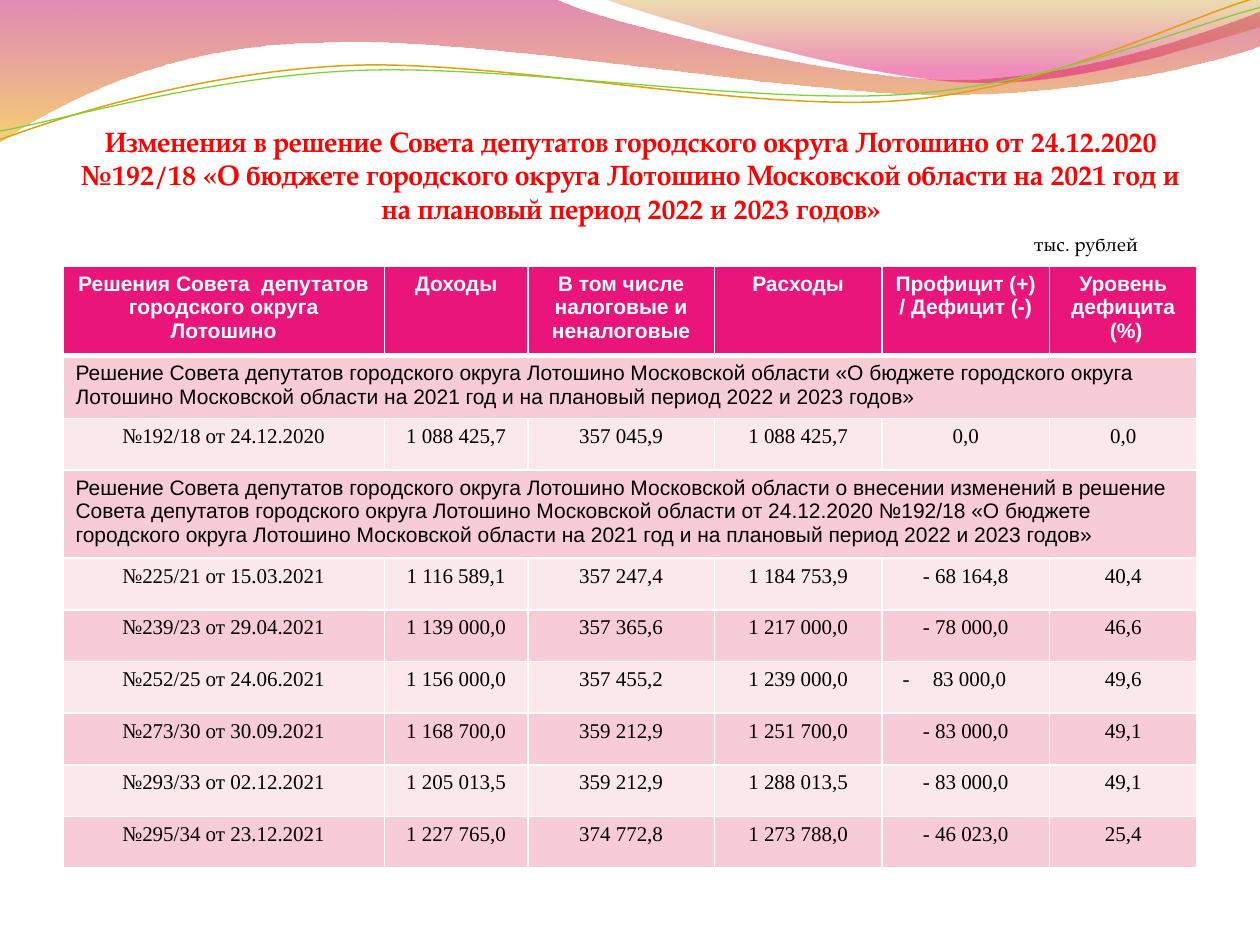
from dataclasses import dataclass

from lxml import etree
from pptx import Presentation
from pptx import util as u
from pptx.dml.color import RGBColor
from pptx.enum import text
from pptx.oxml import ns


@dataclass(frozen=True)
class Theme:
    title: str = "FF0000"
    ink: str = "000000"
    white: str = "FFFFFF"
    header: str = "EA157A"
    bands: tuple = ("FBE8EC", "F7CCD7")
    gold: str = "E0A209"
    green: str = "7FD13B"
    display: str = "TeX Gyre Pagella"
    sans: str = "Arial"
    serif: str = "Times New Roman"
    title_size: int = 16
    unit_size: int = 11
    cell_size: int = 12


THEME = Theme()
W, H = u.Inches(10), u.Inches(7.5)
COLUMNS = (2.55, 1.14, 1.48, 1.33, 1.33, 1.17)
ROW_H, HEADER_H = 0.41, 0.71
SPANNING = (1, 3)  # rows merged across all columns

TITLE = ("Изменения в решение Совета депутатов городского округа Лотошино от 24.12.2020 "
         "№192/18 «О бюджете городского округа Лотошино Московской области на 2021 год "
         "и на плановый период 2022 и 2023 годов»")
BUDGET = ("«О бюджете городского округа Лотошино Московской области на 2021 год "
          "и на плановый период 2022 и 2023 годов»")
COUNCIL = "Решение Совета депутатов городского округа Лотошино Московской области "
ROWS = [
    ("Решения Совета  депутатов городского округа Лотошино", "Доходы",
     "В том числе налоговые и неналоговые", "Расходы",
     "Профицит (+) / Дефицит (-)", "Уровень дефицита\n (%)"),
    (COUNCIL + BUDGET,),
    ("№192/18 от 24.12.2020", "1 088 425,7", "357 045,9", "1 088 425,7", "0,0", "0,0"),
    (COUNCIL + "о внесении изменений в решение Совета депутатов городского округа "
     "Лотошино Московской области от 24.12.2020 №192/18 " + BUDGET,),
    ("№225/21 от 15.03.2021", "1 116 589,1", "357 247,4", "1 184 753,9", "- 68 164,8", "40,4"),
    ("№239/23 от 29.04.2021", "1 139 000,0", "357 365,6", "1 217 000,0", "- 78 000,0", "46,6"),
    ("№252/25 от 24.06.2021", "1 156 000,0", "357 455,2", "1 239 000,0", "83 000,0", "49,6"),
    ("№273/30 от 30.09.2021", "1 168 700,0", "359 212,9", "1 251 700,0", "- 83 000,0", "49,1"),
    ("№293/33 от 02.12.2021", "1 205 013,5", "359 212,9", "1 288 013,5", "- 83 000,0", "49,1"),
    ("№295/34 от 23.12.2021", "1 227 765,0", "374 772,8", "1 273 788,0", "- 46 023,0", "25,4"),
]
DASH_CELL = (6, 4)  # its minus sign is a list dash

# Outlines in inches: a start point, then lines (2 numbers) or curves (6 numbers)
BAND = [(0, -0.01), (4.4, -0.01), (4.76, 0.17, 6.64, 0.63, 7.58, 0.63),
        (8.53, 0.63, 9.58, 0.26, 10, 0.09), (10.01, 0.36),
        (9.83, 0.44, 8.7, 0.76, 7.46, 0.75), (6.22, 0.75, 3.82, 0.28, 2.57, 0.34),
        (1.29, 0.35, 0.46, 0.83, -0.01, 1.13)]
CORNER = [(4.79, -0.01), (5.09, 0.11, 6.82, 0.62, 7.69, 0.65),
          (8.56, 0.69, 9.61, 0.32, 10, 0.21), (10, 0)]
GOLD_WAVE = [(0, 1.11), (0.48, 0.93, 1.58, 0.57, 2.77, 0.52),
             (3.95, 0.47, 5.93, 0.89, 7.13, 0.8), (8.33, 0.71, 9.38, 0.15, 9.98, -0.02)]
GREEN_WAVE = [(0, 1.04), (0.47, 0.96, 1.64, 0.61, 2.83, 0.56),
              (4.03, 0.51, 5.97, 0.83, 7.17, 0.75), (8.36, 0.67, 9.41, 0.21, 10, 0.06)]


def rgb(value):
    return RGBColor.from_string(value)


def sub(parent, tag, **attrs):
    return etree.SubElement(parent, ns.qn(tag), attrs)


def add_outline(slide, outline, close):
    """Freeform through all knots; each curve's three lines become one Bezier."""
    points = [(u.Inches(x), u.Inches(y)) for seg in outline
              for x, y in zip(seg[::2], seg[1::2])]
    builder = slide.shapes.build_freeform(*points[0], scale=1.0)
    builder.add_line_segments(points[1:], close=close)
    sp = builder.convert_to_shape()
    sp.shadow.inherit = False
    lines = iter(list(sp._element.iter(ns.qn("a:lnTo"))))
    for seg in outline[1:]:
        knots = [next(lines) for _ in range(len(seg) // 2)]
        if len(knots) == 3:
            curve = etree.Element(ns.qn("a:cubicBezTo"))
            knots[0].addprevious(curve)
            for knot in knots:
                curve.append(knot[0])
                knot.getparent().remove(knot)
    return sp


def add_wash(slide, outline, stops):
    """Filled wave; stops are (position %, colour, opacity %), top to bottom."""
    sp = add_outline(slide, outline, True)
    sp.line.fill.background()
    sp.fill.gradient()
    grad = sp._element.spPr.find(ns.qn("a:gradFill"))
    for child in list(grad):
        grad.remove(child)
    stop_list = sub(grad, "a:gsLst")
    for pos, color, opacity in stops:
        stop = sub(stop_list, "a:gs", pos=str(pos * 1000))
        sub(sub(stop, "a:srgbClr", val=color), "a:alpha", val=str(opacity * 1000))
    sub(grad, "a:lin", ang="5400000", scaled="0")


def add_wave(slide, outline, color, width):
    sp = add_outline(slide, outline, False)
    sp.fill.background()
    sp.line.color.rgb = rgb(color)
    sp.line.width = u.Pt(width)


def style(p, font, size, color, bold=False, align=text.PP_ALIGN.CENTER):
    p.alignment = align
    for r in p.runs:
        r.font.name, r.font.size, r.font.bold = font, u.Pt(size), bold
        r.font.color.rgb = rgb(color)


def add_label(slide, box, content, size, color, anchor, bold=False, insets=None):
    """Text box; box holds left, top, width, height as shares of the slide."""
    x, y, w, h = box
    sp = slide.shapes.add_textbox(int(x * W), int(y * H), int(w * W), int(h * H))
    tf = sp.text_frame
    tf.word_wrap = True
    tf.vertical_anchor = anchor
    if insets:
        tf.margin_left, tf.margin_top, tf.margin_right, tf.margin_bottom = map(u.Inches, insets)
    tf.text = content
    style(tf.paragraphs[0], THEME.display, size, color, bold)
    return tf


def set_borders(cell, top, bottom):
    tc_pr = cell._tc.get_or_add_tcPr()
    for i, (side, width) in enumerate(zip("LRTB", (1, 1, top, bottom))):
        ln = etree.Element(ns.qn(f"a:ln{side}"), {"w": str(u.Pt(width))})
        sub(sub(ln, "a:solidFill"), "a:srgbClr", val=THEME.white)
        tc_pr.insert(i, ln)


def add_dash(cell):
    indent = u.Inches(0.24)
    cell.margin_right = u.Inches(0.28)
    p_pr = cell.text_frame.paragraphs[0]._p.get_or_add_pPr()
    p_pr.set("marL", str(indent))
    p_pr.set("indent", str(-indent))
    sub(p_pr, "a:buFont", typeface=THEME.serif)
    sub(p_pr, "a:buChar", char="-")


def fill_cell(cell, row, col, content):
    header, spanning = row == 0, row in SPANNING
    cell.text = content
    cell.fill.solid()
    cell.fill.fore_color.rgb = rgb(THEME.header if header else THEME.bands[row % 2])
    set_borders(cell, 3 if row == 1 else 1, 3 if header else 1)
    if (row, col) == DASH_CELL:
        add_dash(cell)
    for p in cell.text_frame.paragraphs:
        style(p, THEME.sans if header or spanning else THEME.serif, THEME.cell_size,
              THEME.white if header else THEME.ink, header,
              text.PP_ALIGN.LEFT if spanning else text.PP_ALIGN.CENTER)


def add_budget_table(slide):
    heights = [HEADER_H] + [ROW_H] * (len(ROWS) - 1)
    table = slide.shapes.add_table(len(ROWS), len(COLUMNS), int(0.05 * W), u.Inches(2.11),
                                   u.Inches(sum(COLUMNS)), u.Inches(sum(heights))).table
    table.horz_banding = False
    for column, width in zip(table.columns, COLUMNS):
        column.width = u.Inches(width)
    for i, (values, height) in enumerate(zip(ROWS, heights)):
        table.rows[i].height = u.Inches(height)
        if i in SPANNING:
            table.cell(i, 0).merge(table.cell(i, len(COLUMNS) - 1))
        for j, value in enumerate(values):
            fill_cell(table.cell(i, j), i, j, value)


def main():
    prs = Presentation()
    prs.slide_width, prs.slide_height = W, H
    slide = prs.slides.add_slide(prs.slide_layouts[6])

    # Decorative waves
    add_wash(slide, BAND, [(0, "BD0059", 45), (100, "F0AB00", 55)])
    add_wash(slide, CORNER, [(0, "C38B00", 30), (80, "E1006B", 45)])
    add_wave(slide, GOLD_WAVE, THEME.gold, 0.85)
    add_wave(slide, GREEN_WAVE, THEME.green, 0.75)

    # Title, table and unit of measure
    tf = add_label(slide, (0.051, 0.101, 0.9, 0.137), TITLE, THEME.title_size, THEME.title,
                   text.MSO_ANCHOR.BOTTOM, bold=True, insets=(0, 0.05, 0, 0))
    tf.paragraphs[0].space_after = u.Pt(3)
    add_budget_table(slide)
    add_label(slide, (0.791, 0.248, 0.142, 0.021), "тыс. рублей", THEME.unit_size, THEME.ink,
              text.MSO_ANCHOR.MIDDLE)

    prs.save("out.pptx")


if __name__ == "__main__":
    main()
